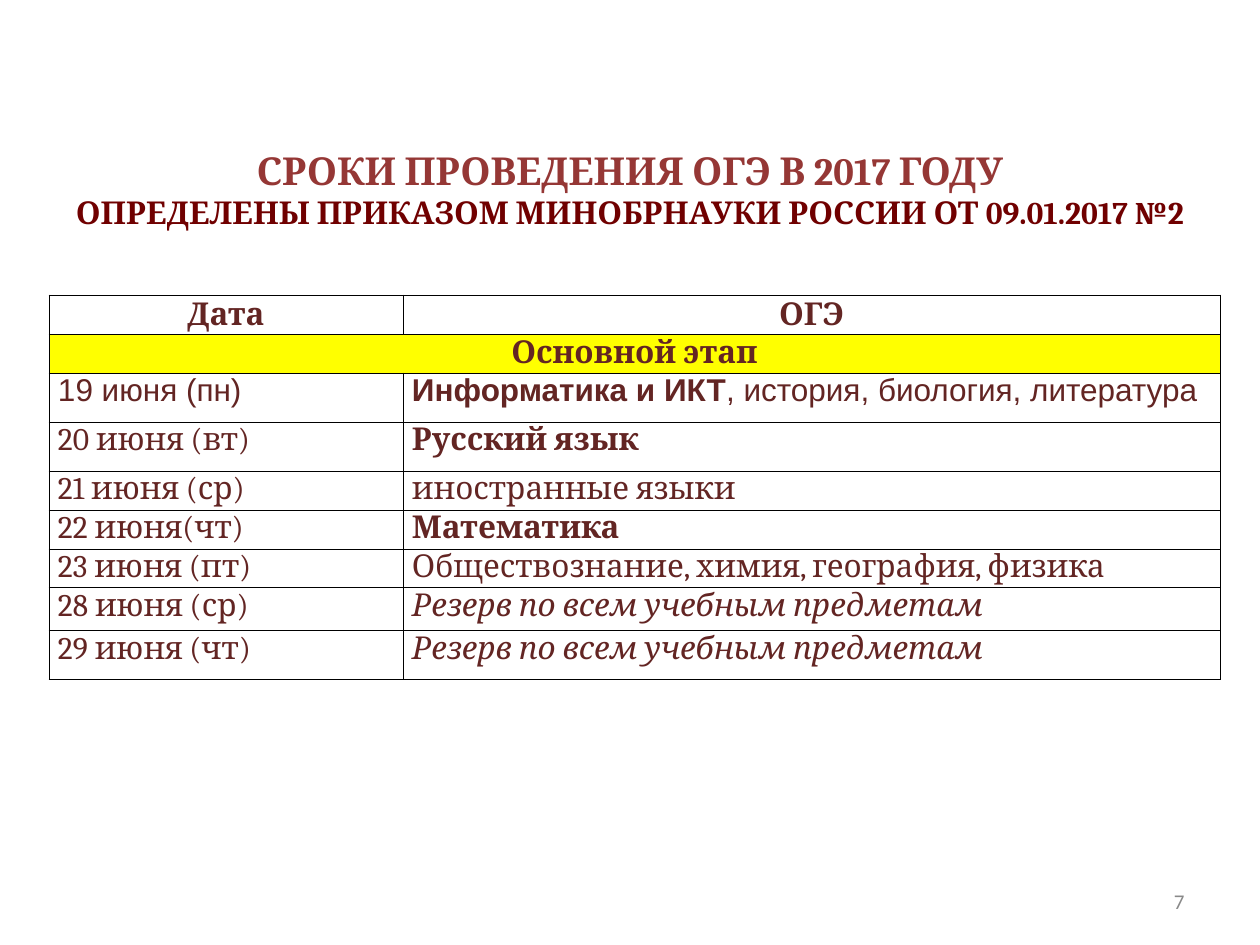
"""Build the slide with the 2017 exam dates: heading, timetable and page number."""
from lxml import etree
from pptx import Presentation
from pptx import util as u
from pptx.dml.color import RGBColor
from pptx.enum import text
from pptx.oxml import parse_xml

PX = u.Inches(1) / 126
BROWN = RGBColor(0x63, 0x25, 0x23)
BRICK = RGBColor(0x95, 0x37, 0x35)
MAROON = RGBColor(0x70, 0x00, 0x00)
GREY = RGBColor(0x89, 0x89, 0x89)
YELLOW = RGBColor(0xFF, 0xFF, 0x00)
DRAWING = "http://schemas.openxmlformats.org/drawingml/2006/main"


def px(count):
    """Turn pixels into EMU."""
    return u.Emu(round(count * PX))


def write(para, content, size=18, font="Cambria", color=BROWN, bold=False, italic=False):
    """Add one formatted span to a paragraph."""
    span = para.add_run()
    span.text = content
    span.font.size = u.Pt(size)
    span.font.name = font
    span.font.color.rgb = color
    span.font.bold = bold
    span.font.italic = italic


deck = Presentation()
deck.slide_width, deck.slide_height = px(1260), px(945)
page = deck.slides.add_slide(deck.slide_layouts[6])

heading = page.shapes.add_textbox(px(63), px(155), px(1134), px(135)).text_frame
heading.word_wrap = True
heading.vertical_anchor = text.MSO_ANCHOR.MIDDLE
heading.margin_left = heading.margin_right = heading.margin_top = 0
heading.margin_bottom = px(67)
para = heading.paragraphs[0]
para.alignment = text.PP_ALIGN.CENTER
write(para, "СРОКИ ПРОВЕДЕНИЯ ОГЭ В 2017 ГОДУ", size=22, color=BRICK, bold=True)
para.add_line_break()
write(para, "ОПРЕДЕЛЕНЫ ПРИКАЗОМ МИНОБРНАУКИ РОССИИ ОТ 09.01.2017 №2", color=MAROON, bold=True)

BOLD = {"bold": True}
ITALIC = {"italic": True}
ARIAL = {"font": "Arial"}
reserve = [("Резерв по всем учебным предметам", ITALIC)]
rows = [
    (39, [("Дата", BOLD)], [("ОГЭ", BOLD)]),
    (39, [("Основной этап", BOLD)], []),
    (49, [("19 июня (пн)", ARIAL)],
     [("Информатика и ИКТ", ARIAL | BOLD), (", история, биология, литература", ARIAL)]),
    (49, [("20 июня (вт)", {})], [("Русский язык", BOLD)]),
    (39, [("21 июня (ср)", {})], [("иностранные языки", {})]),
    (39, [("22 июня(чт)", {})], [("Математика", BOLD)]),
    (39, [("23 июня (пт)", {})], [("Обществознание, химия, география, физика", {})]),
    (43, [("28 июня (ср)", {})], reserve),
    (49, [("29 июня (чт)", {})], reserve),
]
height = sum(row[0] for row in rows)
table = page.shapes.add_table(len(rows), 2, px(49), px(295), px(1171), px(height)).table
table.first_row = table.horz_banding = False
for column, width in zip(table.columns, (354, 817)):
    column.width = px(width)
table.cell(1, 0).merge(table.cell(1, 1))

for index, (row_height, *contents) in enumerate(rows):
    table.rows[index].height = px(row_height)
    header = index < 2
    for column, spans in enumerate(contents):
        cell = table.cell(index, column)
        cell.margin_left = cell.margin_right = px(1 if header else 9)
        cell.margin_top = px(1 if header else 0)
        cell.margin_bottom = 0
        cell.vertical_anchor = text.MSO_ANCHOR.MIDDLE if index == 0 else text.MSO_ANCHOR.TOP
        properties = cell._tc.get_or_add_tcPr()
        for side in "LRTB":
            properties.append(parse_xml(
                f'<a:ln{side} xmlns:a="{DRAWING}" w="{u.Pt(0.5)}"><a:solidFill>'
                f'<a:srgbClr val="000000"/></a:solidFill></a:ln{side}>'))
        if index == 1:
            cell.fill.solid()
            cell.fill.fore_color.rgb = YELLOW
        else:
            cell.fill.background()
        para = cell.text_frame.paragraphs[0]
        para.alignment = text.PP_ALIGN.CENTER if header else text.PP_ALIGN.LEFT
        for content, style in spans:
            write(para, content, **style)

number = page.shapes.add_textbox(px(903), px(876), px(294), px(50)).text_frame
number.word_wrap = True
number.vertical_anchor = text.MSO_ANCHOR.MIDDLE
number.paragraphs[0].alignment = text.PP_ALIGN.RIGHT
write(number.paragraphs[0], "7", size=12, font="Calibri", color=GREY)

deck.save("out.pptx")
